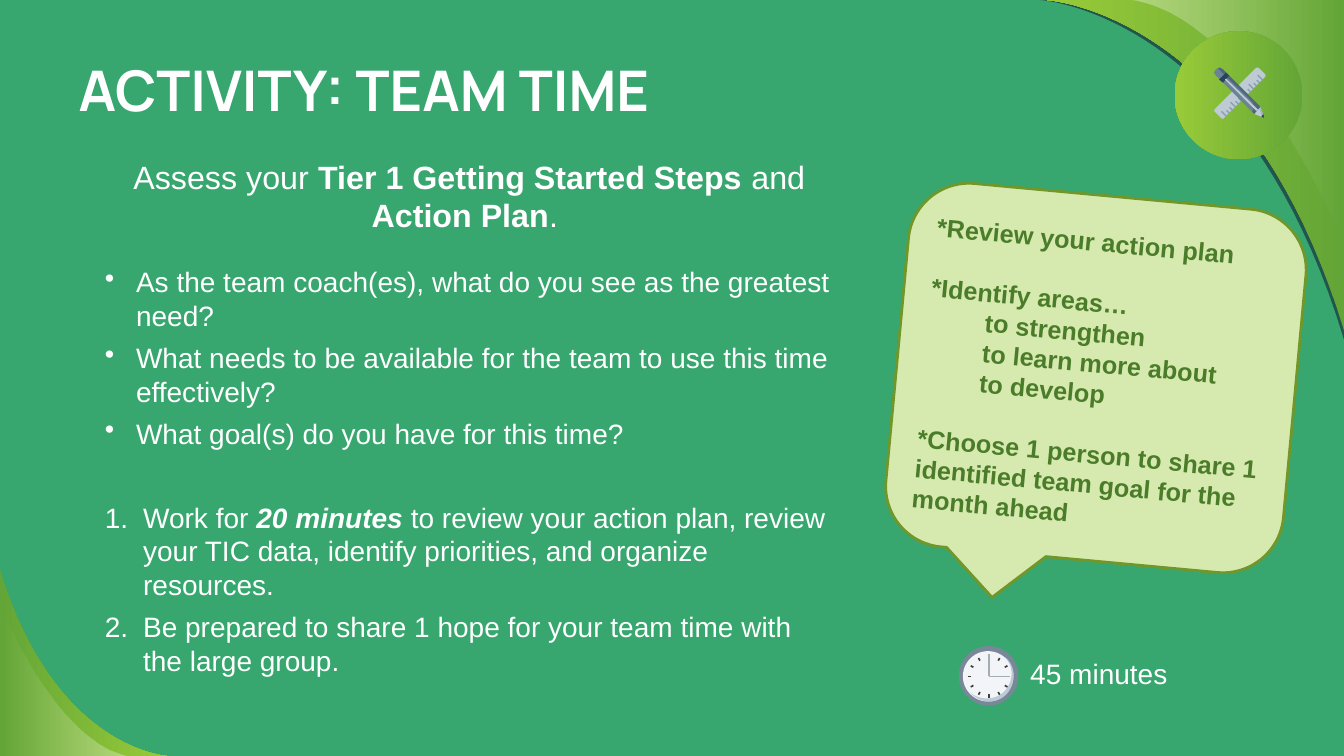
"""Build the Activity: Team Time slide."""
import math

from lxml import etree
from pptx import Presentation
from pptx import util as u
from pptx.dml.color import RGBColor
from pptx.enum import shapes, text
from pptx.oxml.ns import qn

BACKGROUND = RGBColor(0x37, 0xA7, 0x6F)
WHITE = RGBColor(0xFF, 0xFF, 0xFF)
NAVY = RGBColor(0x12, 0x10, 0x2F)
GREEN = RGBColor(0x63, 0xA5, 0x37)
LIME = RGBColor(0x99, 0xCB, 0x38)
NOTE_FILL = RGBColor(0xD6, 0xEA, 0xAF)
NOTE_LINE = RGBColor(0x71, 0x96, 0x29)
NOTE_TEXT = RGBColor(0x4A, 0x7C, 0x29)
STEEL = RGBColor(0xBE, 0xCB, 0xD5)
STEEL_MARK = RGBColor(0x88, 0xA1, 0xB4)
STEEL_SHADE = RGBColor(0x9F, 0xB3, 0xC2)
PENCIL = RGBColor(0x6B, 0x83, 0x97)
PENCIL_SHADE = RGBColor(0x4E, 0x67, 0x7C)
PENCIL_DARK = RGBColor(0x29, 0x43, 0x5D)
CLOCK_RIM = RGBColor(0x79, 0x88, 0x98)
CLOCK_FACE = RGBColor(0xF2, 0xF4, 0xF7)
CLOCK_SHADE = RGBColor(0xBC, 0xCA, 0xD6)
CLOCK_HAND = RGBColor(0xA3, 0xAD, 0xB8)
CLOCK_TICK = RGBColor(0x3D, 0x3D, 0x3D)


def bezier(start, first, second, end, steps=40):
    points = []
    for step in range(steps + 1):
        t = step / steps
        weights = ((1 - t) ** 3, 3 * t * (1 - t) ** 2, 3 * t * t * (1 - t), t ** 3)
        points.append(tuple(sum(weight * point[axis] for weight, point
                                in zip(weights, (start, first, second, end)))
                            for axis in (0, 1)))
    return points


def set_alpha(color_element, percent):
    etree.SubElement(color_element, qn("a:alpha")).set("val", str(percent * 1000))


class SlideBuilder:
    body_font = "Arial"
    title_font = "Manrope"

    def __init__(self, presentation):
        self.slide = presentation.slides.add_slide(presentation.slide_layouts[5])
        fill = self.slide.background.fill
        fill.solid()
        fill.fore_color.rgb = BACKGROUND

    def paint(self, shape, color=None, alpha=None):
        shape.shadow.inherit = False
        shape.line.fill.background()
        if color is None:
            shape.fill.background()
            return
        shape.fill.solid()
        shape.fill.fore_color.rgb = color
        if alpha is not None:
            set_alpha(shape.fill._xPr.find(".//" + qn("a:srgbClr")), alpha)

    def gradient(self, shape, colors, angle, alphas=None):
        self.paint(shape)
        shape.fill.gradient()
        shape.fill.gradient_angle = angle
        for stop, color in zip(shape.fill.gradient_stops, colors):
            stop.color.rgb = color
        if alphas:
            elements = shape.fill._xPr.findall(".//" + qn("a:srgbClr"))
            for element, alpha in zip(elements, alphas):
                set_alpha(element, alpha)

    def preset(self, kind, left, top, width, height, color=None):
        shape = self.slide.shapes.add_shape(
            kind, *map(u.Inches, (left, top, width, height)))
        self.paint(shape, color)
        return shape

    def outline(self, points, color=None, alpha=None):
        corners = [(u.Inches(x), u.Inches(y)) for x, y in points]
        builder = self.slide.shapes.build_freeform(*corners[0], scale=1.0)
        builder.add_line_segments(corners[1:], close=True)
        shape = builder.convert_to_shape()
        self.paint(shape, color, alpha)
        return shape

    def swoosh(self, curve, corner, angle):
        self.gradient(self.outline(bezier(*curve) + [corner]), (GREEN, LIME), angle)

    def sheen(self, curve, corner, angle):
        self.gradient(self.outline(bezier(*curve) + [corner]), (WHITE, WHITE), angle, (0, 36))

    def line(self, start, end, color, width):
        connector = self.slide.shapes.add_connector(
            shapes.MSO_CONNECTOR.STRAIGHT, *map(u.Inches, start + end))
        connector.line.color.rgb = color
        connector.line.width = u.Pt(width)
        etree.SubElement(connector._element.spPr, qn("a:effectLst"))

    def title(self, words, left, top, width, height):
        shape = self.slide.shapes.title
        shape.left, shape.top, shape.width, shape.height = map(
            u.Inches, (left, top, width, height))
        frame = shape.text_frame
        self.prepare(frame, margin=0.1)
        paragraph = frame.paragraphs[0]
        paragraph.alignment = text.PP_ALIGN.LEFT
        self.run(paragraph, words, 40, WHITE, bold=True, font=self.title_font)

    def prepare(self, frame, margin=0.05):
        frame.word_wrap = True
        frame.auto_size = text.MSO_AUTO_SIZE.NONE
        frame.vertical_anchor = text.MSO_ANCHOR.MIDDLE
        frame.margin_left = frame.margin_right = u.Inches(0.1)
        frame.margin_top = frame.margin_bottom = u.Inches(margin)

    def run(self, paragraph, words, size, color, bold=False, italic=False, font=None):
        run = paragraph.add_run()
        run.text = words
        run.font.name = font or self.body_font
        run.font.size = u.Pt(size)
        run.font.bold = bold
        run.font.italic = italic
        run.font.color.rgb = color

    def paragraph(self, frame, runs, size, color, before=0, align=text.PP_ALIGN.LEFT,
                  indent=0, bullet=None, spacing=1.2):
        first = frame.paragraphs[0]
        paragraph = frame.add_paragraph() if first.runs else first
        paragraph.alignment = align
        paragraph.line_spacing = u.Pt(size * spacing)
        paragraph.space_before = u.Pt(before)
        properties = paragraph._p.get_or_add_pPr()
        properties.set("marL", str(u.Inches(indent)))
        if bullet:
            properties.set("indent", str(-u.Inches(indent)))
            tag, key, value = bullet
            etree.SubElement(properties, qn(tag)).set(key, value)
        for words, *style in runs:
            self.run(paragraph, words, size, color, *style)


def draw_corners(builder):
    builder.outline(bezier((13.33, 3.37), (12.35, 0.11), (10.31, 0), (10.31, 0))
                    + [(13.33, 0)], NAVY, 54)
    builder.swoosh(((10.38, 0), (10.38, 0), (12.38, 0.11), (13.33, 3.28)), (13.33, 0), 180)
    builder.sheen(((13.33, 2.44), (13.33, 2.44), (12.42, 0.15), (11.18, 0)), (13.33, 0), 180)
    builder.swoosh(((1.66, 7.5), (1.66, 7.5), (0.54, 7.44), (0, 5.65)), (0, 7.5), 0)
    builder.sheen(((0, 6.01), (0, 6.01), (0.56, 7.41), (1.32, 7.5)), (0, 7.5), 0)


def draw_tools(builder):
    badge = builder.preset(shapes.MSO_SHAPE.OVAL, 11.65, 0.31, 1.27, 1.27)
    builder.gradient(badge, (GREEN, LIME), 180)
    builder.outline([(12.46, 0.67), (12.05, 1.08), (12.04, 1.1), (12.11, 1.17), (12.13, 1.18),
                     (12.55, 0.76), (12.55, 0.74), (12.48, 0.67)], STEEL)
    for mark in range(13):
        length = 0.03 if mark % 3 else 0.05
        x, y = 12.17 + 0.03 * mark, 1.15 - 0.03 * mark
        builder.outline([(x - length, y - length), (x - length - 0.01, y - length + 0.01),
                         (x - 0.01, y + 0.01), (x, y)], STEEL_MARK)
    builder.outline([(12.09, 0.67), (12.06, 0.69), (12.04, 0.72), (12.06, 0.75),
                     (12.44, 1.13), (12.5, 1.06), (12.13, 0.69)], PENCIL)
    builder.outline([(12.5, 1.06), (12.44, 1.13), (12.54, 1.17)], STEEL)
    builder.outline([(12.5, 1.06), (12.49, 1.08), (12.52, 1.16), (12.54, 1.17)], STEEL_SHADE)
    builder.outline([(12.1, 0.67), (12.08, 0.68), (12.42, 1.01), (12.44, 1.06), (12.42, 1.11),
                     (12.44, 1.13), (12.5, 1.06), (12.13, 0.69)], PENCIL_SHADE)
    builder.outline([(12.53, 1.13), (12.51, 1.16), (12.54, 1.17)], PENCIL_DARK)
    builder.outline([(12.16, 0.72), (12.09, 0.79), (12.13, 0.82), (12.19, 0.75)], PENCIL_DARK)
    builder.outline([(12.16, 0.78), (12.15, 0.79), (12.46, 1.1), (12.48, 1.09)], STEEL)


def draw_clock(builder):
    x, y = 9.81, 6.71
    builder.preset(shapes.MSO_SHAPE.OVAL, 9.51, 6.41, 0.59, 0.59, CLOCK_RIM)
    builder.preset(shapes.MSO_SHAPE.OVAL, 9.55, 6.46, 0.5, 0.5, CLOCK_FACE)
    builder.line((x, 6.49), (x, y), CLOCK_HAND, 1.2)
    builder.line((x, y), (10.02, y), CLOCK_HAND, 1.2)
    builder.outline(bezier((9.97, 6.52), (10.06, 6.62), (10.05, 6.77), (9.96, 6.86))
                    + bezier((9.96, 6.86), (9.87, 6.95), (9.72, 6.95), (9.62, 6.87))
                    + bezier((9.62, 6.87), (9.72, 6.98), (9.88, 6.99), (9.98, 6.89))
                    + bezier((9.98, 6.89), (10.08, 6.78), (10.08, 6.61), (9.97, 6.52)),
                    CLOCK_SHADE)
    for hour in (1, 2, *range(4, 12)):
        sine, cosine = math.sin(math.radians(30 * hour)), math.cos(math.radians(30 * hour))
        builder.line((x + 0.18 * sine, y - 0.18 * cosine),
                     (x + 0.21 * sine, y - 0.21 * cosine), CLOCK_TICK, 1.2)
    label = builder.slide.shapes.add_textbox(*map(u.Inches, (10.12, 6.46, 1.97, 0.44)))
    builder.prepare(label.text_frame)
    builder.paragraph(label.text_frame, [("45 minutes",)], 20, WHITE)


def write_steps(builder):
    shape = builder.preset(shapes.MSO_SHAPE.ROUNDED_RECTANGULAR_CALLOUT, 0.68, 1.46, 7.95, 5.35)
    shape.adjustments[0], shape.adjustments[1] = -0.4, 0.66
    frame = shape.text_frame
    builder.prepare(frame)
    builder.paragraph(frame, [("Assess your ",), ("Tier 1 Getting Started Steps ", True),
                              ("and ",), ("Action Plan", True), (". ",)],
                      23, WHITE, align=text.PP_ALIGN.CENTER)
    dot, number = ("a:buChar", "char", "•"), ("a:buAutoNum", "type", "arabicPeriod")
    for runs, before, indent, bullet in (
            ([("As the team coach(es), what do you see as the greatest need?",)], 22, 0.31, dot),
            ([("What needs to be available for the team to use this time effectively?",)],
             6, 0.31, dot),
            ([("What goal(s) do you have for this time?",)], 6, 0.31, dot),
            ([("Work for ",), ("20 minutes ", True, True),
              ("to review your action plan, review your TIC data, identify priorities, "
               "and organize resources.",)], 36, 0.38, number),
            ([("Be prepared to share 1 hope for your team time with the large group.",)],
             6, 0.38, number)):
        builder.paragraph(frame, runs, 20, WHITE, before, indent=indent, bullet=bullet)


def write_note(builder):
    note = builder.preset(shapes.MSO_SHAPE.ROUNDED_RECTANGULAR_CALLOUT,
                          8.89, 1.94, 3.96, 3.62, NOTE_FILL)
    note.rotation = 5.3
    note.line.color.rgb = NOTE_LINE
    note.line.width = u.Pt(2)
    builder.prepare(note.text_frame)
    for words, before, indent in (
            ("*Review your action plan", 0, 0), ("*Identify areas…", 21.6, 0),
            ("to strengthen", 0, 0.56), ("to learn more about", 0, 0.56), ("to develop", 0, 0.56),
            ("*Choose 1 person to share 1 identified team goal for the month ahead", 21.6, 0)):
        builder.paragraph(note.text_frame, [(words, True)], 18, NOTE_TEXT, before, indent=indent)


def main():
    presentation = Presentation()
    presentation.slide_width, presentation.slide_height = u.Inches(13.33), u.Inches(7.5)
    builder = SlideBuilder(presentation)
    draw_corners(builder)
    builder.title("ACTIVITY: TEAM TIME", 0.68, 0.42, 10.26, 0.92)
    write_steps(builder)
    write_note(builder)
    draw_tools(builder)
    draw_clock(builder)
    presentation.save("out.pptx")


if __name__ == "__main__":
    main()
